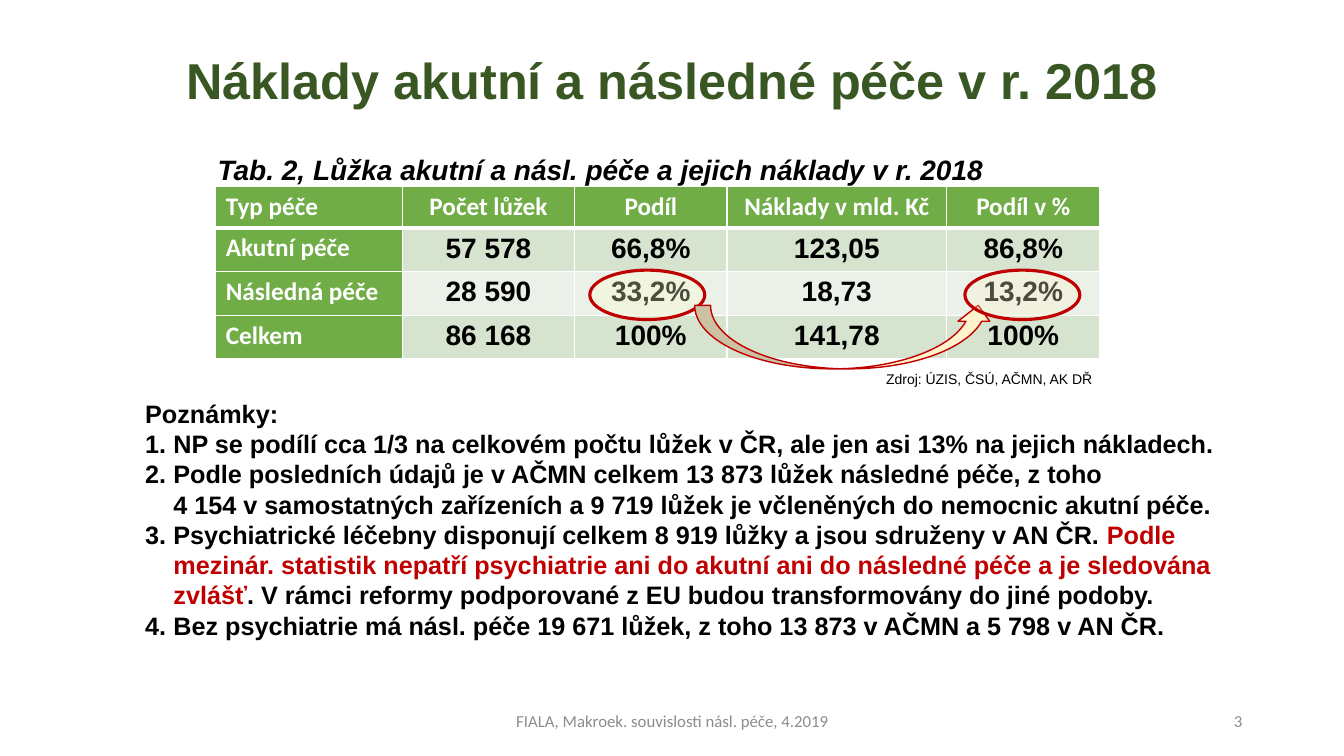
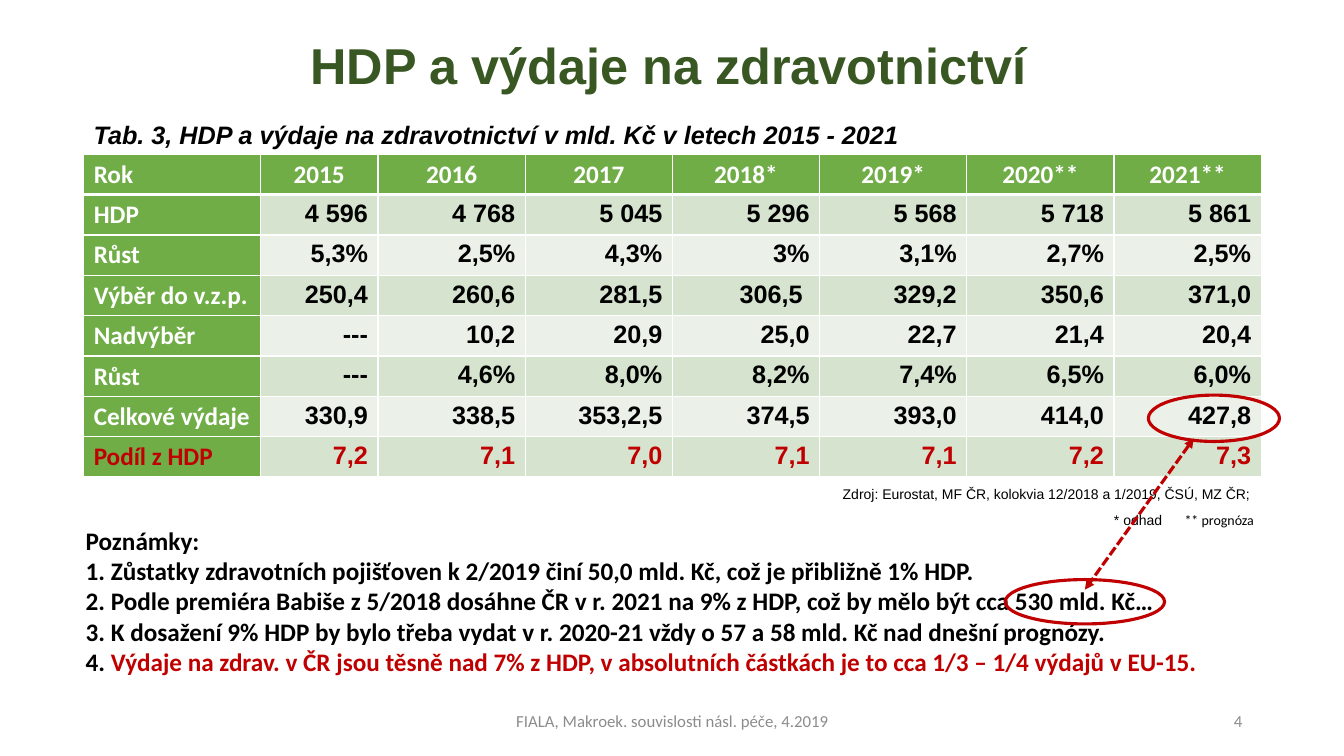
"""Build two slides on Czech health care costs, each with a table and notes."""
from dataclasses import dataclass

from lxml.etree import SubElement
from pptx import Presentation
from pptx.dml.color import RGBColor as RGB
from pptx.enum.dml import MSO_LINE
from pptx.enum.shapes import MSO_CONNECTOR, MSO_SHAPE as SHAPE
from pptx.enum.text import MSO_ANCHOR as ANCHOR, MSO_AUTO_SIZE as AUTO, PP_ALIGN as ALIGN
from pptx.oxml import parse_xml
from pptx.oxml.ns import nsdecls, qn
from pptx.util import Pt

EMU_PER_PX = 9144
FOOTER = "FIALA, Makroek. souvislosti násl. péče, 4.2019"


@dataclass(frozen=True)
class Theme:
    title: str = "385723"
    text: str = "000000"
    accent: str = "C00000"
    white: str = "FFFFFF"
    muted: str = "8C8C8C"
    header: str = "70AD47"
    bands: tuple = ("D5E3CF", "EBF1E9")
    pale_yellow: str = "FFFFCC"
    cream: str = "FFF2CC"
    sans: str = "Arial"
    alt: str = "Calibri"
    title_size: int = 36
    large: int = 20
    body: int = 18
    footer: int = 12
    source: int = 10
    outline: float = 2.25


T = Theme()


def px(n):
    return n * EMU_PER_PX


def assign(obj, **values):
    for name, value in values.items():
        setattr(obj, name, value)


def place(shape, box):
    assign(shape, **dict(zip(("left", "top", "width", "height"), map(px, box))))


def add_run(p, text, color=T.text, size=T.body, **font):
    r = p.add_run()
    r.text = text
    assign(r.font, **{"size": Pt(size), "name": T.sans, **font})
    r.font.color.rgb = RGB.from_string(color)


def add_text(s, box, text, align=ALIGN.LEFT, anchor=ANCHOR.TOP, **style):
    sp = s.shapes.add_textbox(*map(px, box))
    assign(sp.text_frame, word_wrap=True, vertical_anchor=anchor)
    p = sp.text_frame.paragraphs[0]
    p.alignment = align
    add_run(p, text, **style)


def add_slide(prs, number, title, title_box):
    s = prs.slides.add_slide(prs.slide_layouts[1])
    place(s.shapes.title, title_box)
    tf = s.shapes.title.text_frame
    assign(tf, vertical_anchor=ANCHOR.MIDDLE, auto_size=AUTO.NONE)
    p = tf.paragraphs[0]
    assign(p, alignment=ALIGN.CENTER, line_spacing=0.9)
    add_run(p, title, T.title, T.title_size, bold=True)
    style = dict(anchor=ANCHOR.MIDDLE, color=T.muted, size=T.footer, name=T.alt)
    add_text(s, (442, 695, 450, 40), FOOTER, ALIGN.CENTER, **style)
    add_text(s, (942, 695, 300, 40), str(number), ALIGN.RIGHT, **style)
    return s


def set_numbering(p, font, indent):
    pPr = p._p.get_or_add_pPr()
    pPr.set("marL", str(px(indent)))
    pPr.set("indent", str(-px(indent)))
    color = SubElement(pPr, qn("a:buClr"))
    SubElement(color, qn("a:srgbClr"), val=T.text)
    SubElement(pPr, qn("a:buFont"), typeface=font)
    SubElement(pPr, qn("a:buAutoNum"), type="arabicPeriod")


def add_notes(s, box, notes, font, indent):
    body = s.placeholders[1]
    place(body, box)
    tf = body.text_frame
    assign(tf, word_wrap=True, auto_size=AUTO.NONE, vertical_anchor=ANCHOR.TOP)
    heading = tf.paragraphs[0]
    add_run(heading, "Poznámky:", bold=True, name=font)
    pPr = heading._p.get_or_add_pPr()
    assign(pPr, marL=0, indent=0)
    SubElement(pPr, qn("a:buNone"))
    for note in notes:
        p = tf.add_paragraph()
        for text, color in note:
            for i, line in enumerate(text.split("\n")):
                if i:
                    p.add_line_break()
                add_run(p, line, color, bold=True, name=font)
        set_numbering(p, font, indent)
    for p in tf.paragraphs:
        assign(p, line_spacing=1.0, space_before=Pt(0), alignment=ALIGN.LEFT)


def set_borders(cell, row):
    widths = {"lnL": 1, "lnR": 1, "lnT": 3 if row == 1 else 1, "lnB": 3 if row == 0 else 1}
    for i, (side, width) in enumerate(widths.items()):
        cell._tc.get_or_add_tcPr().insert(i, parse_xml(
            f'<a:{side} {nsdecls("a")} w="{Pt(width)}"><a:solidFill>'
            f'<a:srgbClr val="{T.white}"/></a:solidFill></a:{side}>'))


def add_table(s, left, top, widths, row_height, rows, align, size, red_row=None):
    box = (left, top, sum(widths), row_height * len(rows))
    table = s.shapes.add_table(len(rows), len(widths), *map(px, box)).table
    for col, width in zip(table.columns, widths):
        col.width = px(width)
    for i, row in enumerate(rows):
        table.rows[i].height = px(row_height)
        for j, text in enumerate(row):
            cell = table.cell(i, j)
            is_header = i == 0 or j == 0
            cell.fill.solid()
            fill = T.header if is_header else T.bands[(i - 1) % 2]
            cell.fill.fore_color.rgb = RGB.from_string(fill)
            set_borders(cell, i)
            p = cell.text_frame.paragraphs[0]
            p.alignment = ALIGN.LEFT if j == 0 else ALIGN.CENTER if i == 0 else align
            color = T.accent if i == red_row else T.white if is_header else T.text
            add_run(p, text, color, T.body if is_header else size, bold=True,
                    name=T.alt if is_header else T.sans)


def add_marker(s, kind, box, fill=None, opacity=100, width=T.outline):
    sp = s.shapes.add_shape(kind, *map(px, box))
    sp.shadow.inherit = False
    sp.line.color.rgb = RGB.from_string(T.accent)
    sp.line.width = Pt(width)
    if fill is None:
        sp.fill.background()
        return
    sp.fill.solid()
    sp.fill.fore_color.rgb = RGB.from_string(fill)
    if opacity < 100:
        color = sp._element.spPr.find(qn("a:solidFill"))[0]
        SubElement(color, qn("a:alpha"), val=str(opacity * 1000))


def add_double_arrow(s, start, end):
    cx = s.shapes.add_connector(MSO_CONNECTOR.STRAIGHT, *map(px, start + end))
    cx.line.color.rgb = RGB.from_string(T.accent)
    assign(cx.line, width=Pt(T.outline), dash_style=MSO_LINE.SQUARE_DOT)
    ln = cx.line._get_or_add_ln()
    for tag in ("a:headEnd", "a:tailEnd"):
        SubElement(ln, qn(tag), type="triangle")
    SubElement(cx._element.spPr, qn("a:effectLst"))


def build_bed_costs(prs):
    s = add_slide(prs, 3, "Náklady akutní a následné péče v r. 2018", (92, 21, 1150, 124))
    rows = [
        ("Typ péče", "Počet lůžek", "Podíl", "Náklady v mld. Kč", "Podíl v %"),
        ("Akutní péče", "57 578", "66,8%", "123,05", "86,8%"),
        ("Následná péče", "28 590", "33,2%", "18,73", "13,2%"),
        ("Celkem", "86 168", "100%", "141,78", "100%"),
    ]
    add_table(s, 214, 185, (185, 171, 151, 218, 152), 41, rows, ALIGN.CENTER, T.large)
    add_text(s, (206, 146, 820, 44), "Tab. 2, Lůžka akutní a násl. péče a jejich náklady v r. 2018",
             size=T.large, bold=True, italic=True)
    add_marker(s, SHAPE.OVAL, (585, 268, 114, 49), T.pale_yellow, 30)
    add_marker(s, SHAPE.CURVED_UP_ARROW, (689, 303, 297, 63), T.cream, width=1)
    add_marker(s, SHAPE.OVAL, (957, 268, 114, 49), T.cream, 30)
    add_text(s, (869, 363, 260, 27), "Zdroj: ÚZIS, ČSÚ, AČMN, AK DŘ", size=T.source)
    add_notes(s, (134, 390, 1120, 252), [
        [("NP se podílí cca 1/3 na celkovém počtu lůžek v ČR, ale jen asi 13% na jejich nákladech.",
          T.text)],
        [("Podle posledních údajů je v AČMN celkem 13 873 lůžek následné péče, z toho\n"
          "4 154 v samostatných zařízeních a 9 719 lůžek je včleněných do nemocnic akutní péče.",
          T.text)],
        [("Psychiatrické léčebny disponují celkem 8 919 lůžky a jsou sdruženy v AN ČR. ", T.text),
         ("Podle\nmezinár. statistik nepatří psychiatrie ani do akutní ani do následné péče "
          "a je sledována\nzvlášť", T.accent),
         (". V rámci reformy podporované z EU budou transformovány do jiné podoby.", T.text)],
        [("Bez psychiatrie má násl. péče 19 671 lůžek, z toho 13 873 v AČMN a 5 798 v AN ČR.",
          T.text)],
    ], T.sans, 28)


def build_gdp_spending(prs):
    s = add_slide(prs, 4, "HDP a výdaje na zdravotnictví", (88, 30, 1150, 76))
    rows = [
        ("Rok", "2015", "2016", "2017", "2018*", "2019*", "2020**", "2021**"),
        ("HDP", "4 596", "4 768", "5 045", "5 296", "5 568", "5 718", "5 861"),
        ("Růst", "5,3%", "2,5%", "4,3%", "3%", "3,1%", "2,7%", "2,5%"),
        ("Výběr do v.z.p.", "250,4", "260,6", "281,5", "306,5 ", "329,2", "350,6", "371,0"),
        ("Nadvýběr", "---", "10,2", "20,9", "25,0", "22,7", "21,4", "20,4"),
        ("Růst", "---", "4,6%", "8,0%", "8,2%", "7,4%", "6,5%", "6,0%"),
        ("Celkové výdaje", "330,9", "338,5", "353,2,5", "374,5", "393,0", "414,0", "427,8"),
        ("Podíl z HDP", "7,2", "7,1", "7,0", "7,1", "7,1", "7,2", "7,3"),
    ]
    add_table(s, 83, 153, (175, 117) + (146,) * 6, 40, rows, ALIGN.RIGHT, T.body, red_row=7)
    add_text(s, (83, 113, 860, 40),
             "Tab. 3, HDP a výdaje na zdravotnictví v mld. Kč v letech 2015 - 2021",
             bold=True, italic=True)
    add_text(s, (826, 477, 445, 27),
             "Zdroj: Eurostat, MF ČR, kolokvia 12/2018 a 1/2019, ČSÚ, MZ ČR;", size=T.source)
    add_text(s, (1095, 503, 88, 27), "* odhad", size=T.source)
    add_text(s, (1165, 503, 91, 27), "** prognóza", size=T.source, name=T.alt)
    add_notes(s, (75, 516, 1150, 162), [
        [("Zůstatky zdravotních pojišťoven k 2/2019 činí 50,0 mld. Kč, což je přibližně 1% HDP.",
          T.text)],
        [("Podle premiéra Babiše z 5/2018 dosáhne ČR v r. 2021 na 9% z HDP, "
          "což by mělo být cca 530 mld. Kč…", T.text)],
        [("K dosažení 9% HDP by bylo třeba vydat v r. 2020-21 vždy o 57 a 58 mld. Kč "
          "nad dnešní prognózy.", T.text)],
        [("Výdaje na zdrav. v ČR jsou těsně nad 7% z HDP, v absolutních částkách "
          "je to cca 1/3 – 1/4 výdajů v EU-15.", T.accent)],
    ], T.alt, 25)
    for box in ((997, 575, 158, 44), (1139, 392, 130, 46)):
        add_marker(s, SHAPE.OVAL, box)
    add_double_arrow(s, (1184, 435), (1076, 585))


def main():
    prs = Presentation()
    assign(prs, slide_width=px(1333), slide_height=px(750))
    build_bed_costs(prs)
    build_gdp_spending(prs)
    prs.save("out.pptx")


if __name__ == "__main__":
    main()
